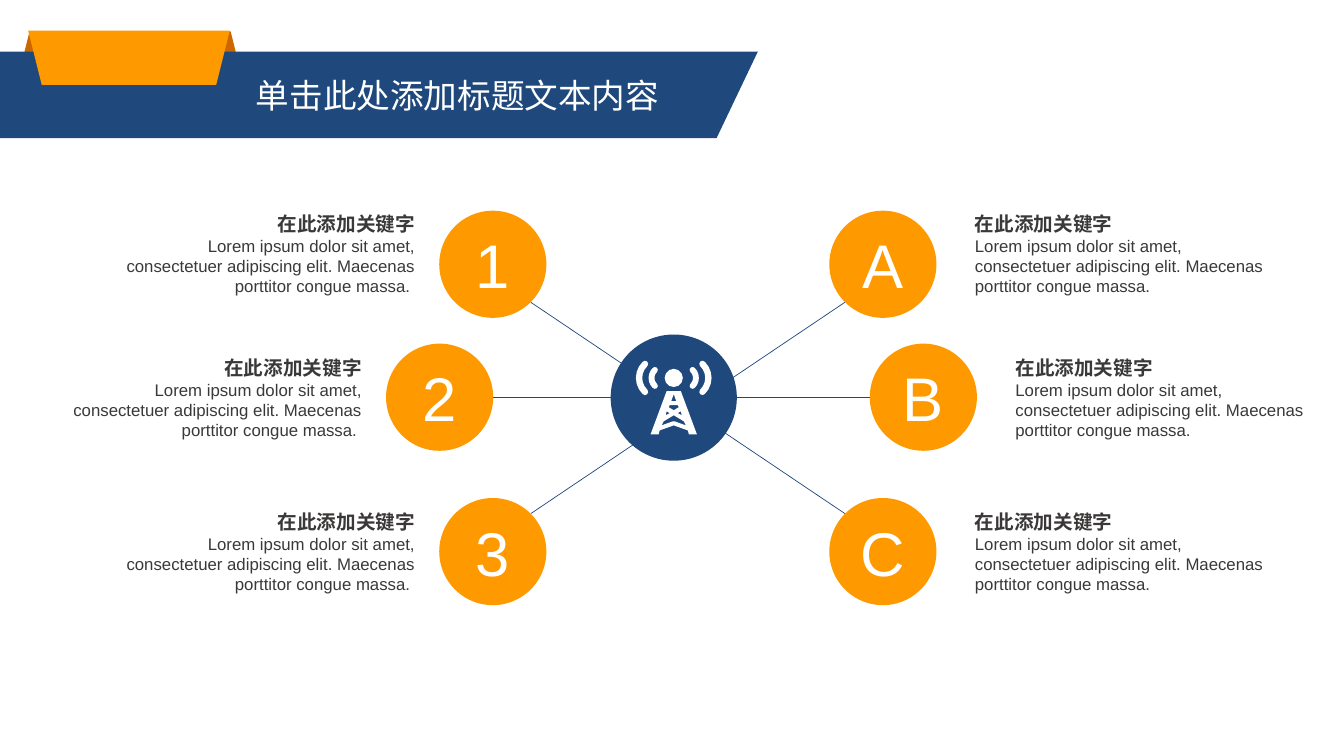
from lxml.etree import SubElement
from pptx import Presentation
from pptx.dml.color import RGBColor
from pptx.enum.shapes import MSO_CONNECTOR as Link, MSO_SHAPE as Preset
from pptx.enum.text import MSO_ANCHOR as Anchor, MSO_AUTO_SIZE as AutoSize, PP_ALIGN as Align
from pptx.oxml.ns import qn
from pptx.util import Cm, Pt

COLORS = {"navy": "1F487C", "orange": "FF9900", "fold": "CC6600", "white": "FFFFFF", "ink": "3B3838"}
FONT = "Arial"
TITLE = "单击此处添加标题文本内容"
KEYWORD = "在此添加关键字"
DETAIL = "Lorem ipsum dolor sit amet, consectetuer adipiscing elit. Maecenas porttitor congue massa."
BADGE = 2.7
NOTE_WIDTH, NOTE_HEIGHT = 8.38, 2.49
HUB_X, HUB_Y, HUB = 16.98, 10.02, 3.18
ROWS = [(5.31, -0.15), (8.66, 0.13), (12.55, 0.13)]
LEFT_BADGES = [("1", 11.07), ("2", 9.73), ("3", 11.07)]
RIGHT_BADGES = [("A", 20.9), ("B", 21.92), ("C", 20.9)]
TOWER = [
    [(-7, 0), (-23, 43), (-15, 43), (-14, 39), (0, 34), (14, 39), (15, 43), (23, 43), (7, 0)],
    [(0, 3), (2.5, 10), (-2.5, 10)],
    [(-4, 14), (4, 14), (5, 16), (0, 19), (-5, 16)],
    [(-7, 20), (-4, 22), (-8, 24)],
    [(7, 20), (4, 22), (8, 24)],
    [(12, 34), (1, 30), (-1, 30), (-12, 34), (-10, 30), (0, 24), (10, 30)],
]


def rgb(name):
    """Return the named colour."""
    return RGBColor.from_string(COLORS[name])


def paint(shape, color):
    """Fill a shape plainly, with no outline or shadow."""
    shape.shadow.inherit = False
    shape.fill.solid()
    shape.fill.fore_color.rgb = rgb(color)
    shape.line.fill.background()
    return shape


def add_preset(slide, preset, left, top, width, height, color):
    """Add a filled preset shape."""
    return paint(slide.shapes.add_shape(preset, Cm(left), Cm(top), Cm(width), Cm(height)), color)


def add_outline(slide, contours, color):
    """Add a filled freeform made of closed contours."""
    outline = None
    for contour in contours:
        points = [(Cm(x), Cm(y)) for x, y in contour]
        if outline is None:
            outline = slide.shapes.build_freeform(*points[0], scale=1.0)
        else:
            outline.move_to(*points[0])
        outline.add_line_segments(points[1:], close=True)
    return paint(outline.convert_to_shape(), color)


def format_text(paragraph, size, color, bold=False, align=Align.LEFT):
    """Format the runs of a paragraph."""
    paragraph.alignment = align
    for run in paragraph.runs:
        run.font.name = FONT
        run.font.size = Pt(size)
        run.font.bold = bold
        run.font.color.rgb = rgb(color)


def add_text_frame(slide, left, top, width, height, wrap):
    """Add a text box and return its frame."""
    frame = slide.shapes.add_textbox(Cm(left), Cm(top), Cm(width), Cm(height)).text_frame
    frame.word_wrap = wrap
    frame.auto_size = AutoSize.SHAPE_TO_FIT_TEXT
    frame.margin_left = frame.margin_right = Cm(0.33)
    frame.margin_top = frame.margin_bottom = Cm(0.18)
    return frame


def add_header(slide, left, top, width, height):
    """Draw the title banner with its folded ribbon."""
    add_preset(slide, Preset.TRAPEZOID, left + 0.41, top - 0.51, 5.74, 1.35, "fold")
    right, bottom = left + width, top + height
    add_outline(slide, [[(left, top), (right, top), (right - 1.04, bottom), (left, bottom)]], "navy")
    ribbon = add_preset(slide, Preset.TRAPEZOID, left + 0.71, top - 0.53, 5.08, 1.37, "orange")
    ribbon.rotation = 180
    title = add_text_frame(slide, left + 6.12, top + 0.41, 10.95, 1.37, False)
    title.text = TITLE
    format_text(title.paragraphs[0], 24, "white")


def add_spoke(slide, start, end):
    """Draw a thin line between two points."""
    x1, y1, x2, y2 = (Cm(value) for value in (*start, *end))
    spoke = slide.shapes.add_connector(Link.STRAIGHT, x1, y1, x2, y2)
    spoke.line.color.rgb = rgb("navy")
    spoke.line.width = Pt(0.5)
    SubElement(spoke._element.spPr, qn("a:effectLst"))


def add_spokes(slide):
    """Join each left badge to the right badge across the hub."""
    radius = BADGE / 2
    reach = radius * 0.71
    for row, (across, rise) in enumerate([(reach, reach), (radius, 0), (reach, -reach)]):
        opposite = len(ROWS) - 1 - row
        start = LEFT_BADGES[row][1] + radius + across, ROWS[row][0] + radius + rise
        end = RIGHT_BADGES[opposite][1] + radius - across, ROWS[opposite][0] + radius - rise
        add_spoke(slide, start, end)


def add_wave(slide, x, y, radius, middle, weight):
    """Draw a round-ended signal arc about the given middle angle."""
    wave = slide.shapes.add_shape(Preset.ARC, Cm(x - radius), Cm(y - radius), Cm(2 * radius), Cm(2 * radius))
    wave.shadow.inherit = False
    wave.adjustments[0] = (middle - 46) % 360 * 0.6
    wave.adjustments[1] = (middle + 46) % 360 * 0.6
    wave.fill.background()
    wave.line.color.rgb = rgb("white")
    wave.line.width = Pt(weight)
    wave.line._ln.set("cap", "rnd")


def add_hub(slide, x, y, size):
    """Draw the central disc with its radio mast."""
    add_preset(slide, Preset.OVAL, x - size / 2, y - size / 2, size, size, "navy")
    unit = size / 125
    mast_top, head_y, head = y - 6.5 * unit, y - 19.5 * unit, 18 * unit
    mast = [[(x + dx * unit, mast_top + dy * unit) for dx, dy in contour] for contour in TOWER]
    add_outline(slide, mast, "white")
    add_preset(slide, Preset.OVAL, x - head / 2, head_y - head / 2, head, head, "white")
    for side, middle in [(-1, 180), (1, 0)]:
        for offset, radius, weight in [(15, 19.3, 4.5), (11, 11, 4.2)]:
            add_wave(slide, x + side * offset * unit, head_y, radius * unit, middle, weight)


def add_badge(slide, label, left, top):
    """Draw a round badge with its label."""
    badge = add_preset(slide, Preset.OVAL, left, top, BADGE, BADGE, "orange")
    badge.text_frame.text = label
    badge.text_frame.vertical_anchor = Anchor.MIDDLE
    format_text(badge.text_frame.paragraphs[0], 44, "white", align=Align.CENTER)


def add_note(slide, left, top, detail, align):
    """Write a keyword and its detail."""
    note = add_text_frame(slide, left, top, NOTE_WIDTH, NOTE_HEIGHT, True)
    note.text = f"{KEYWORD}\n{detail}"
    keyword, body = note.paragraphs
    format_text(keyword, 14, "ink", True, align)
    format_text(body, 12, "ink", False, align)


def add_sides(slide):
    """Place the badges and notes on both sides, row by row."""
    for (top, shift), (number, left), (letter, right) in zip(ROWS, LEFT_BADGES, RIGHT_BADGES):
        add_badge(slide, number, left, top)
        add_note(slide, left - 0.28 - NOTE_WIDTH, top + shift, DETAIL + " ", Align.RIGHT)
        add_badge(slide, letter, right, top)
        add_note(slide, right + BADGE + 0.64, top + shift, DETAIL, Align.LEFT)


def main():
    """Build the slide and save it."""
    deck = Presentation()
    deck.slide_width, deck.slide_height = Cm(33.87), Cm(19.05)
    slide = deck.slides.add_slide(deck.slide_layouts[6])
    add_spokes(slide)
    add_header(slide, 0, 1.3, 19.1, 2.18)
    add_hub(slide, HUB_X, HUB_Y, HUB)
    add_sides(slide)
    deck.save("out.pptx")


if __name__ == "__main__":
    main()
